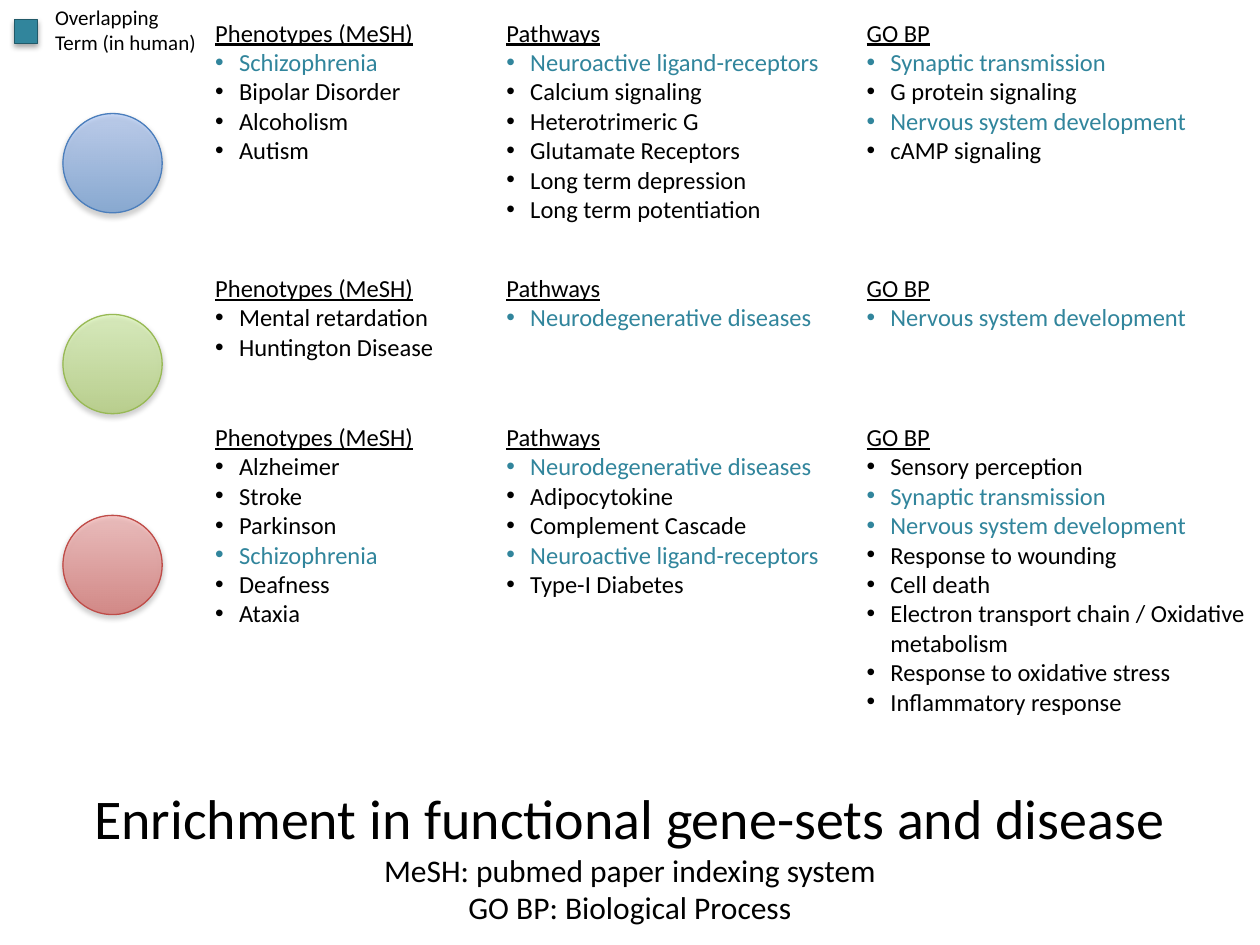
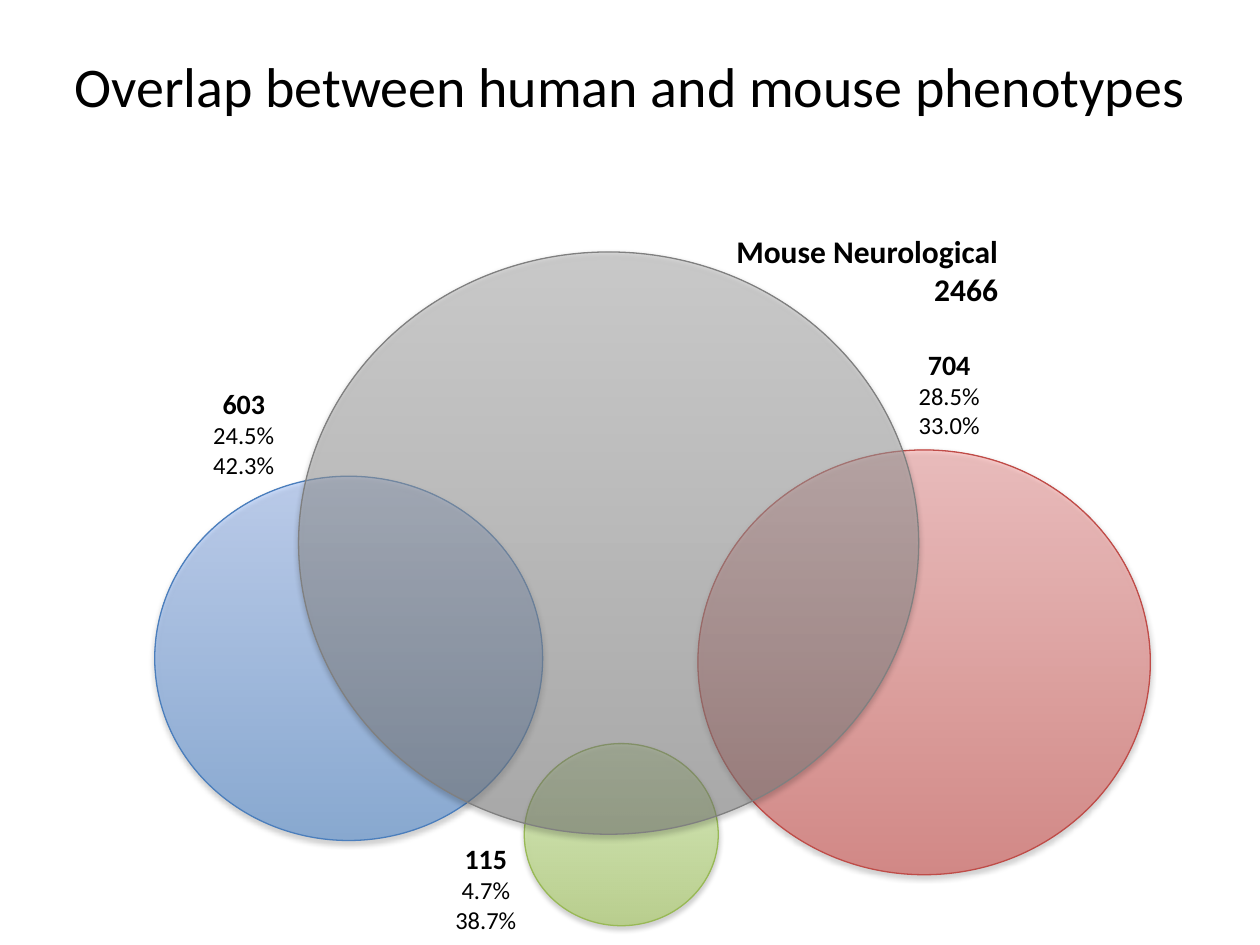
import pptx
import pptx.dml.color
import pptx.enum.shapes
import pptx.enum.text
import pptx.oxml
import pptx.oxml.ns
import pptx.util
from pptx.util import Cm

FONT = "Calibri"
COLOURS = {"text": "000000", "overlap": "31859C", "overlap_line": "215968"}
# Each set: (gradient bottom, gradient top, outline)
SETS = {
    "blue": ("3F80CE", "A4C4FF", "4B7EBC"),
    "green": ("A0CA4A", "DAFFA5", "98B955"),
    "red": ("D1403C", "FFA6A5", "BF4C48"),
    "mouse": ("808080", "BFBFBF", "808080"),
}
LEFT, CENTRE, RIGHT = (pptx.enum.text.PP_ALIGN.LEFT, pptx.enum.text.PP_ALIGN.CENTER,
                       pptx.enum.text.PP_ALIGN.RIGHT)
OVAL = pptx.enum.shapes.MSO_SHAPE.OVAL
SQUARE = pptx.enum.shapes.MSO_SHAPE.RECTANGLE

ENRICHMENT_TITLE = [
    ("Enrichment in functional gene-sets and disease", 32),
    ("MeSH: pubmed paper indexing system", 18),
    ("GO BP: Biological Process", 18),
]
OVERLAP_TITLE = [("Overlap between human and mouse phenotypes", 32)]

# Heading, left and width in cm
COLUMNS = [("Phenotypes (MeSH)", 4.09, 6.07), ("Pathways", 9.96, 6.81), ("GO BP", 17.22, 8.18)]
OVERLAPPING = {
    "Schizophrenia", "Neuroactive ligand-receptors", "Neurodegenerative diseases",
    "Synaptic transmission", "Nervous system development",
}
# Set, top in cm, terms for each column
ENRICHMENT = [
    ("blue", 0.23, [
        ["Schizophrenia", "Bipolar Disorder", "Alcoholism", "Autism"],
        ["Neuroactive ligand-receptors", "Calcium signaling", "Heterotrimeric G",
         "Glutamate Receptors", "Long term depression", "Long term potentiation"],
        ["Synaptic transmission", "G protein signaling", "Nervous system development",
         "cAMP signaling"],
    ]),
    ("green", 5.38, [
        ["Mental retardation", "Huntington Disease"],
        ["Neurodegenerative diseases"],
        ["Nervous system development"],
    ]),
    ("red", 8.38, [
        ["Alzheimer", "Stroke", "Parkinson", "Schizophrenia", "Deafness", "Ataxia"],
        ["Neurodegenerative diseases", "Adipocytokine", "Complement Cascade",
         "Neuroactive ligand-receptors", "Type-I Diabetes"],
        ["Sensory perception", "Synaptic transmission", "Nervous system development",
         "Response to wounding", "Cell death",
         "Electron transport chain / Oxidative metabolism",
         "Response to oxidative stress", "Inflammatory response"],
    ]),
]
CIRCLE_LEFT, CIRCLE_TOP, CIRCLE_PITCH, CIRCLE_SIZE = 1.27, 2.29, 4.05, 2

# Set, left, top, width in cm, from back to front
VENN = [("red", 14.07, 9.07, 9.12), ("blue", 3.12, 9.6, 7.82),
        ("green", 10.57, 14.99, 3.91), ("mouse", 6.02, 5.08, 12.5)]
VENN_ASPECT = 1.065
# Left, top in cm, shared genes, share of mouse set, share of human set
VENN_LABELS = [(8.69, 16.84, "115", "4.7%", "38.7%"),
               (3.81, 7.67, "603", "24.5%", "42.3%"),
               (18.03, 6.88, "704", "28.5%", "33.0%")]


def rgb(value):
    return pptx.dml.color.RGBColor.from_string(value)


def write(para, text, size=14, colour="text", bold=False, underline=False, align=LEFT,
          bullet=False):
    """Add a formatted span to a paragraph."""
    para.alignment = align
    span = para.add_run()
    span.text = text
    font = span.font
    font.name, font.size, font.bold, font.underline = FONT, pptx.util.Pt(size), bold, underline
    font.color.rgb = rgb(COLOURS[colour])
    if bullet:
        properties = para._p.get_or_add_pPr()
        properties.set("marL", str(Cm(0.48)))
        properties.set("indent", str(-Cm(0.48)))
        for tag, name, value in (("buFont", "typeface", "Arial"), ("buChar", "char", "•")):
            pptx.oxml.ns.qn("a:" + tag)
            mark = properties.makeelement(pptx.oxml.ns.qn("a:" + tag), {name: value})
            properties.append(mark)


def add_text(page, left, top, width, height, lines):
    """Add a text box; each line is its text and a dict of format options."""
    box = page.shapes.add_textbox(Cm(left), Cm(top), Cm(width), Cm(height))
    frame = box.text_frame
    frame.word_wrap = True
    for index, (text, options) in enumerate(lines):
        para = frame.add_paragraph() if index else frame.paragraphs[0]
        write(para, text, **options)


def add_shadowed(page, kind, left, top, width, height, line):
    shape = page.shapes.add_shape(kind, Cm(left), Cm(top), Cm(width), Cm(height))
    shape.line.color.rgb = rgb(line)
    shape.line.width = pptx.util.Pt(0.75)
    shape.shadow.inherit = False
    effects = shape._element.spPr.find(pptx.oxml.ns.qn("a:effectLst"))
    effects.append(pptx.oxml.parse_xml(
        f'<a:outerShdw {pptx.oxml.ns.nsdecls("a")} blurRad="40000" dist="23000" dir="5400000"'
        ' rotWithShape="0"><a:srgbClr val="000000"><a:alpha val="35000"/></a:srgbClr>'
        '</a:outerShdw>'))
    return shape


def add_set_circle(page, name, left, top, width, height):
    """Add a half-transparent ellipse in the gradient of a gene set."""
    bottom, light, line = SETS[name]
    circle = add_shadowed(page, OVAL, left, top, width, height, line)
    circle.fill.gradient()
    circle.fill.gradient_angle = 90
    for stop, position, colour in zip(circle.fill.gradient_stops, (0, 1), (bottom, light)):
        stop.position = position
        stop.color.rgb = rgb(colour)
    for colour in circle._element.spPr.iterfind(".//" + pptx.oxml.ns.qn("a:gs") + "/*"):
        alpha = colour.makeelement(pptx.oxml.ns.qn("a:alpha"), {"val": "50000"})
        colour.append(alpha)


def add_page(deck, title_lines, title_top):
    page = deck.slides.add_slide(deck.slide_layouts[5])
    title = page.shapes.title
    title.left, title.top, title.width, title.height = 0, Cm(title_top), deck.slide_width, Cm(1.9)
    frame = title.text_frame
    frame.auto_size = pptx.enum.text.MSO_AUTO_SIZE.NONE
    frame.vertical_anchor = pptx.enum.text.MSO_ANCHOR.MIDDLE
    para = frame.paragraphs[0]
    for index, (text, size) in enumerate(title_lines):
        if index:
            para.add_line_break()
        write(para, text, size=size, align=CENTRE)
    return page


def build_enrichment(deck):
    page = add_page(deck, ENRICHMENT_TITLE, 16.28)
    for row, (name, top, groups) in enumerate(ENRICHMENT):
        add_set_circle(page, name, CIRCLE_LEFT, CIRCLE_TOP + row * CIRCLE_PITCH,
                       CIRCLE_SIZE, CIRCLE_SIZE)
        for (heading, left, width), terms in zip(COLUMNS, groups):
            lines = [(heading, {"underline": True})]
            for term in terms:
                colour = "overlap" if term in OVERLAPPING else "text"
                lines.append((term, {"bullet": True, "colour": colour}))
            add_text(page, left, top, width, 0.25 + 0.6 * len(lines), lines)
    key = add_shadowed(page, SQUARE, 0.3, 0.4, 0.46, 0.48, COLOURS["overlap_line"])
    key.fill.solid()
    key.fill.fore_color.rgb = rgb(COLOURS["overlap"])
    add_text(page, 0.86, -0.03, 3.89, 1.27,
             [(text, {"size": 12}) for text in ("Overlapping", "Term (in human)")])


def build_overlap(deck):
    page = add_page(deck, OVERLAP_TITLE, 0.76)
    for name, left, top, width in VENN:
        add_set_circle(page, name, left, top, width, width / VENN_ASPECT)
    add_text(page, 14.35, 4.55, 6.02, 1.8,
             [(text, {"size": 18, "bold": True, "align": RIGHT})
              for text in ("Mouse Neurological", "2466")])
    for left, top, count, *shares in VENN_LABELS:
        lines = [(count, {"size": 16, "bold": True, "align": CENTRE})]
        lines += [(share, {"align": CENTRE}) for share in shares]
        add_text(page, left, top, 2.21, 2.13, lines)


def main():
    deck = pptx.Presentation()
    deck.slide_width, deck.slide_height = Cm(25.4), Cm(19.05)
    build_enrichment(deck)
    build_overlap(deck)
    deck.save("out.pptx")


if __name__ == "__main__":
    main()
